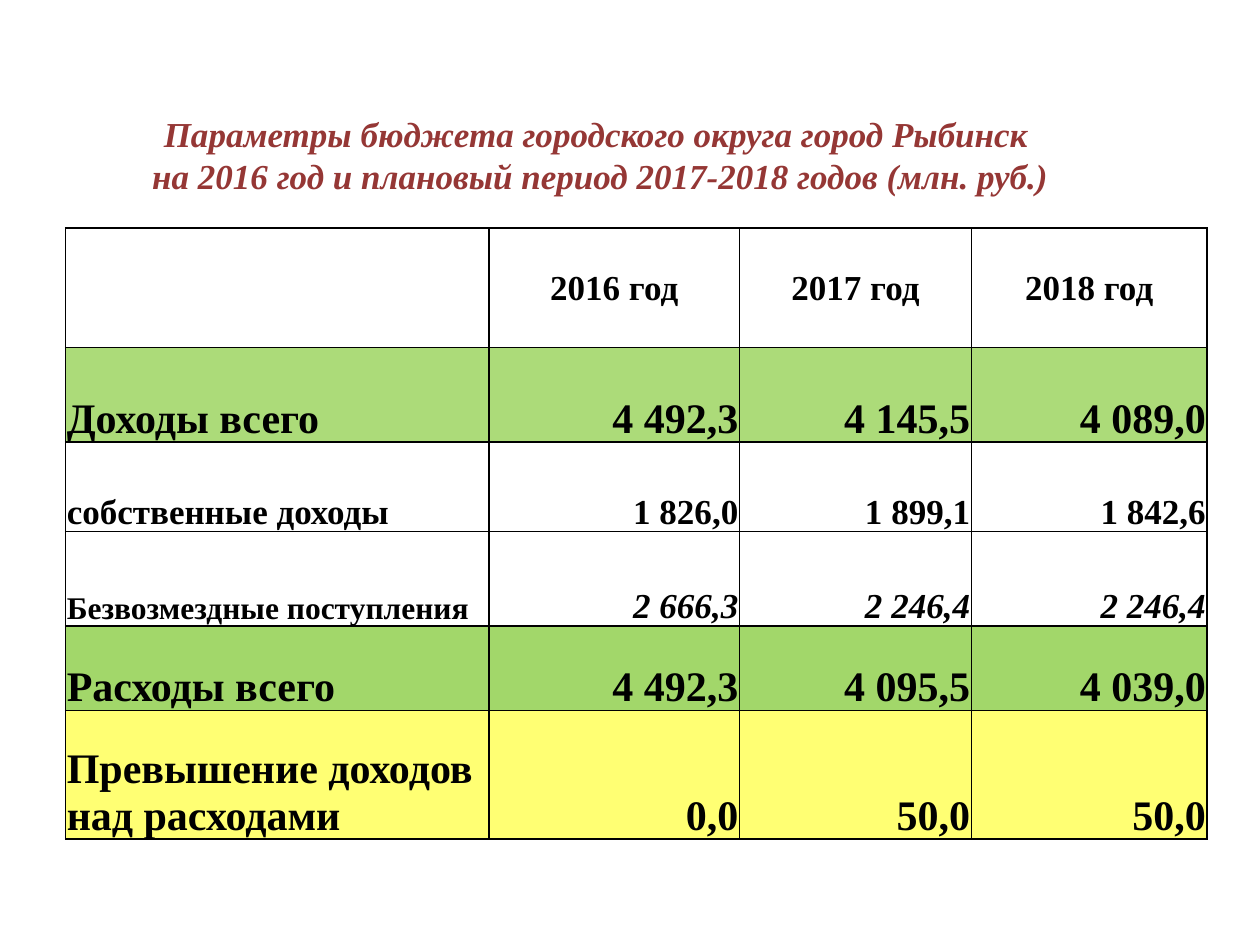
from dataclasses import dataclass

from lxml.etree import SubElement
from pptx import Presentation
from pptx.dml.color import RGBColor
from pptx.enum.text import MSO_ANCHOR, MSO_AUTO_SIZE, PP_ALIGN
from pptx.oxml import parse_xml
from pptx.oxml.ns import nsdecls, qn
from pptx.util import Inches, Pt


@dataclass(frozen=True)
class Theme:
    font: str = "Times New Roman"
    title: str = "953735"
    ink: str = "000000"
    green: str = "92D050"
    yellow: str = "FFFF00"
    small: int = 18
    normal: int = 20
    large: int = 24
    border: int = 1


THEME = Theme()
TITLE = (
    "Параметры бюджета городского округа город Рыбинск",
    " на 2016 год и плановый период 2017-2018 годов (млн. руб.)",
)
YEARS = ("", "2016 год", "2017 год", "2018 год")
COLUMN_WIDTHS = (3.36, 1.99, 1.84, 1.87)


@dataclass(frozen=True)
class BudgetRow:
    texts: tuple
    height: float
    label_size: int = THEME.large
    value_size: int = THEME.large
    fill: str = ""
    opacity: int = 100
    italic_values: bool = False
    heading: bool = False


ROWS = (
    BudgetRow(YEARS, 0.95, THEME.normal, THEME.normal, heading=True),
    BudgetRow(("Доходы всего", "4 492,3", "4 145,5", "4 089,0"), 0.75,
              fill=THEME.green, opacity=76),
    BudgetRow(("собственные доходы", "1 826,0", "1 899,1", "1 842,6"), 0.71,
              THEME.normal, THEME.normal),
    BudgetRow(("Безвозмездные поступления", "2 666,3", "2 246,4", "2 246,4"), 0.75,
              THEME.small, THEME.normal, italic_values=True),
    BudgetRow(("Расходы всего", "4 492,3", "4 095,5", "4 039,0"), 0.67,
              fill=THEME.green, opacity=85),
    BudgetRow(("Превышение доходов над расходами", "0,0", "50,0", "50,0"), 1.02,
              fill=THEME.yellow, opacity=55),
)


def style_paragraph(para, size, color, align, italic=False):
    para.alignment = align
    for span in para.runs:
        span.font.name = THEME.font
        span.font.size = Pt(size)
        span.font.bold = True
        span.font.italic = italic
        span.font.color.rgb = RGBColor.from_string(color)


def fill_cell(cell, color, opacity):
    if not color:
        cell.fill.background()
        return
    cell.fill.solid()
    cell.fill.fore_color.rgb = RGBColor.from_string(color)
    color_node = cell._tc.tcPr.find(f"{qn('a:solidFill')}/{qn('a:srgbClr')}")
    SubElement(color_node, qn("a:alpha"), val=str(opacity * 1000))


def border_cell(cell):
    for position, side in enumerate(("lnL", "lnR", "lnT", "lnB")):
        line = parse_xml(
            f'<a:{side} {nsdecls("a")} w="{Pt(THEME.border)}">'
            f'<a:solidFill><a:srgbClr val="{THEME.ink}"/></a:solidFill></a:{side}>'
        )
        cell._tc.tcPr.insert(position, line)


def build_cell(cell, row, column):
    is_label = column == 0
    cell.margin_left = cell.margin_right = cell.margin_top = Inches(0.01)
    cell.margin_bottom = 0
    cell.vertical_anchor = MSO_ANCHOR.MIDDLE if row.heading else MSO_ANCHOR.BOTTOM
    cell.text_frame.text = row.texts[column]
    align = PP_ALIGN.LEFT if is_label else PP_ALIGN.RIGHT
    style_paragraph(
        cell.text_frame.paragraphs[0],
        row.label_size if is_label else row.value_size,
        THEME.ink,
        PP_ALIGN.CENTER if row.heading else align,
        row.italic_values and not is_label,
    )
    fill_cell(cell, row.fill, row.opacity)
    border_cell(cell)


def add_title(page):
    box = page.shapes.add_textbox(Inches(0.28), Inches(0.84), Inches(8.9), Inches(0.77))
    frame = box.text_frame
    frame.word_wrap = True
    frame.auto_size = MSO_AUTO_SIZE.SHAPE_TO_FIT_TEXT
    frame.text = "\n".join(TITLE)
    for para in frame.paragraphs:
        style_paragraph(para, THEME.normal, THEME.title, PP_ALIGN.CENTER, True)


def add_budget_table(page):
    table = page.shapes.add_table(
        len(ROWS), len(COLUMN_WIDTHS), Inches(0.52), Inches(1.81),
        Inches(sum(COLUMN_WIDTHS)), Inches(sum(row.height for row in ROWS)),
    ).table
    table.first_row = table.horz_banding = False
    for column, width in zip(table.columns, COLUMN_WIDTHS):
        column.width = Inches(width)
    for index, row in enumerate(ROWS):
        table.rows[index].height = Inches(row.height)
        for column in range(len(COLUMN_WIDTHS)):
            build_cell(table.cell(index, column), row, column)


def main():
    deck = Presentation()
    deck.slide_width, deck.slide_height = Inches(10), Inches(7.5)
    page = deck.slides.add_slide(deck.slide_layouts[6])
    add_budget_table(page)
    add_title(page)
    deck.save("out.pptx")


if __name__ == "__main__":
    main()
